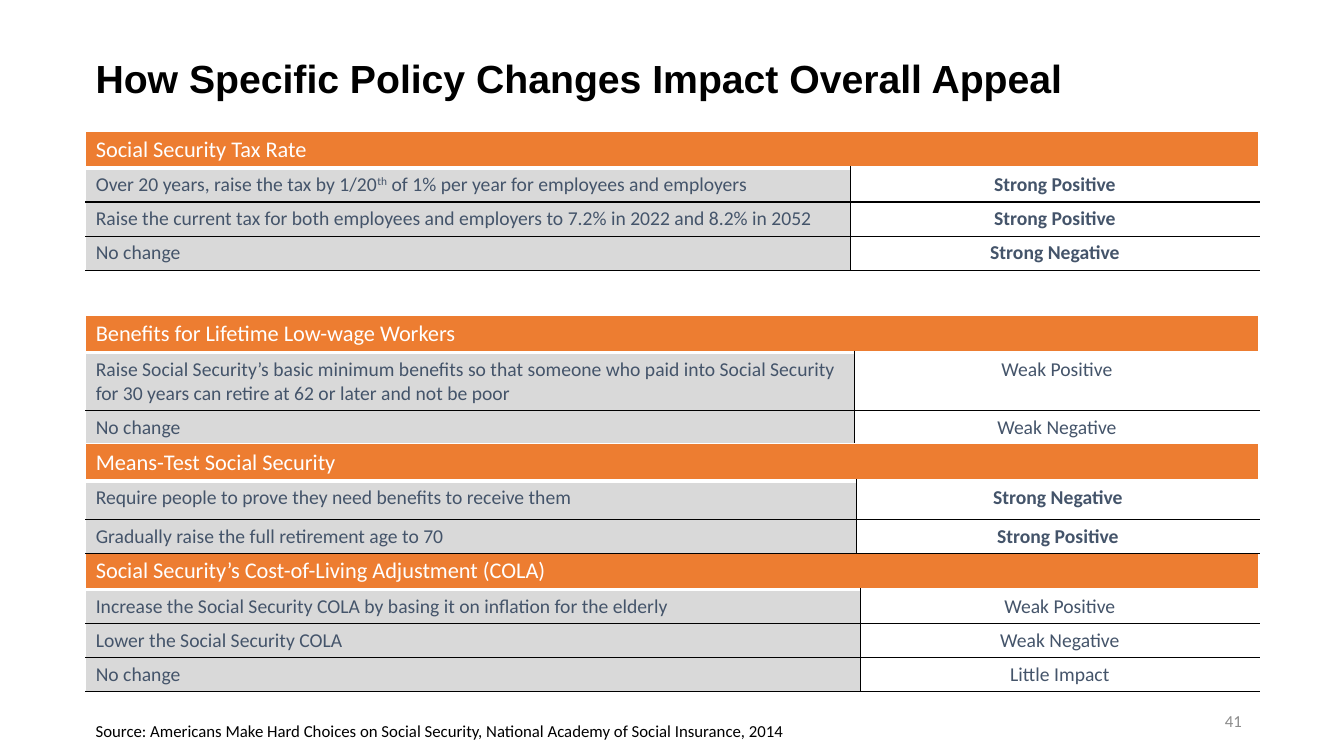
from lxml import etree
from pptx import Presentation
from pptx.dml.color import RGBColor
from pptx.enum.text import MSO_ANCHOR, PP_ALIGN
from pptx.oxml.ns import qn
from pptx.util import Cm, Pt

LEFT, CENTER, RIGHT = PP_ALIGN.LEFT, PP_ALIGN.CENTER, PP_ALIGN.RIGHT
TOP, MIDDLE = MSO_ANCHOR.TOP, MSO_ANCHOR.MIDDLE
COLORS = {
    "black": "000000",
    "white": "FFFFFF",
    "heading": "ED7D31",
    "option": "D9D9D9",
    "body": "44546A",
    "number": "8C8C8C",
}
MARGIN_LEFT = 2.16
TABLE_WIDTH = 29.57

TAX_RATE = [
    (("Over 20 years, raise the tax by 1/20", "th",
      " of 1% per year for employees and employers"), "Strong Positive"),
    ("Raise the current tax for both employees and employers to 7.2% in 2022 and 8.2% in 2052",
     "Strong Positive"),
    ("No change", "Strong Negative"),
]
COST_OF_LIVING = [
    ("Increase the Social Security COLA by basing it on inflation for the elderly", "Weak Positive"),
    ("Lower the Social Security COLA", "Weak Negative"),
    ("No change", "Little Impact"),
]
LOW_WAGE = [
    ("Raise Social Security’s basic minimum benefits so that someone who paid into "
     "Social Security for 30 years can retire at 62 or later and not be poor", "Weak Positive"),
    ("No change", "Weak Negative"),
]
MEANS_TEST = [
    ("Require people to prove they need benefits to receive them", "Strong Negative"),
    ("Gradually raise the full retirement age to 70", "Strong Positive"),
]
SECTIONS = [
    ("Social Security Tax Rate", TAX_RATE, 3.3, 19.28, (0.93, 0.86, 0.86, 0.86)),
    ("Social Security’s Cost-of-Living Adjustment (COLA)", COST_OF_LIVING, 13.92, 19.53,
     (0.93, 0.86, 0.86, 0.86)),
    ("Benefits for Lifetime Low-wage Workers", LOW_WAGE, 7.95, 19.38, (0.93, 1.46, 0.86)),
    ("Means-Test Social Security", MEANS_TEST, 11.18, 19.43, (0.94, 0.97, 0.86)),
]


def write(frame, text, size=14, color="body", bold=False, font="Calibri", align=LEFT, spacing=None):
    """Write text in a frame; in a tuple every second part is superscript."""
    paragraph = frame.paragraphs[0]
    paragraph.alignment = align
    if spacing:
        paragraph.line_spacing = spacing
    for index, part in enumerate((text,) if isinstance(text, str) else text):
        run = paragraph.add_run()
        run.text = part
        run.font.size = Pt(size)
        run.font.name = font
        run.font.bold = bold
        run.font.color.rgb = RGBColor.from_string(COLORS[color])
        if index % 2:
            run.font._element.set("baseline", "30000")


def add_text(slide, box, text, anchor=TOP, **text_format):
    """Add a wrapped text box in a box given in centimetres."""
    frame = slide.shapes.add_textbox(*map(Cm, box)).text_frame
    frame.word_wrap = True
    frame.vertical_anchor = anchor
    write(frame, text, **text_format)


def style_cell(cell, fill, left, right, top, bottom, bottom_width=1):
    """Set the fill and the four borders of a cell."""
    if fill:
        cell.fill.solid()
        cell.fill.fore_color.rgb = RGBColor.from_string(COLORS[fill])
    else:
        cell.fill.background()
    properties = cell._tc.get_or_add_tcPr()
    borders = [("a:lnL", left, 1), ("a:lnR", right, 1), ("a:lnT", top, 1),
               ("a:lnB", bottom, bottom_width)]
    for position, (tag, color, width) in enumerate(borders):
        border = etree.Element(qn(tag), w=str(Pt(width)))
        solid = etree.SubElement(border, qn("a:solidFill"))
        etree.SubElement(solid, qn("a:srgbClr"), val=COLORS[color])
        properties.insert(position, border)


def add_section(slide, box, heading, options, option_width, row_heights):
    """Add one policy table with its heading, options and impacts."""
    left, top, width = box
    table = slide.shapes.add_table(len(options) + 1, 2, Cm(left), Cm(top), Cm(width),
                                   Cm(sum(row_heights))).table
    table.first_row = table.horz_banding = False
    table.columns[0].width = Cm(option_width)
    table.columns[1].width = Cm(width - option_width)
    for row, height in zip(table.rows, row_heights):
        row.height = Cm(height)

    for column in range(2):
        style_cell(table.cell(0, column), "heading", "white", "white", "white", "white", 3)
    table.cell(0, 0).merge(table.cell(0, 1))
    write(table.cell(0, 0).text_frame, heading, size=16, color="white")

    for row, (option, impact) in enumerate(options, 1):
        rule = "white" if row == 1 else "black"
        option_cell, impact_cell = table.cell(row, 0), table.cell(row, 1)
        style_cell(option_cell, "option", "white", "black", rule, "black")
        style_cell(impact_cell, None, "black", "white", rule, "black")
        write(option_cell.text_frame, option)
        write(impact_cell.text_frame, impact, bold=impact.startswith("Strong"), align=CENTER)


def add_footer(slide, box):
    """Add the source line and the slide number."""
    left, top, width = box
    add_text(slide, (left, top + 0.38, 25.07, 0.76),
             "Source: Americans Make Hard Choices on Social Security, "
             "National Academy of Social Insurance, 2014", size=12, color="black")
    add_text(slide, (left + width - 7.8, top, 7.62, 1.02), "41", anchor=MIDDLE,
             size=12, color="number", align=RIGHT)


def main():
    """Build and save the slide."""
    presentation = Presentation()
    presentation.slide_width, presentation.slide_height = Cm(33.87), Cm(19.05)
    slide = presentation.slides.add_slide(presentation.slide_layouts[6])
    add_text(slide, (MARGIN_LEFT, 1.22, 28.83, 1.65),
             "How Specific Policy Changes Impact Overall Appeal", anchor=MIDDLE,
             size=28, color="black", bold=True, font="Arial", spacing=0.9)
    for heading, options, top, option_width, row_heights in SECTIONS:
        add_section(slide, (MARGIN_LEFT, top, TABLE_WIDTH), heading, options,
                    option_width, row_heights)
    add_footer(slide, (MARGIN_LEFT, 17.65, TABLE_WIDTH))
    presentation.save("out.pptx")


if __name__ == "__main__":
    main()
